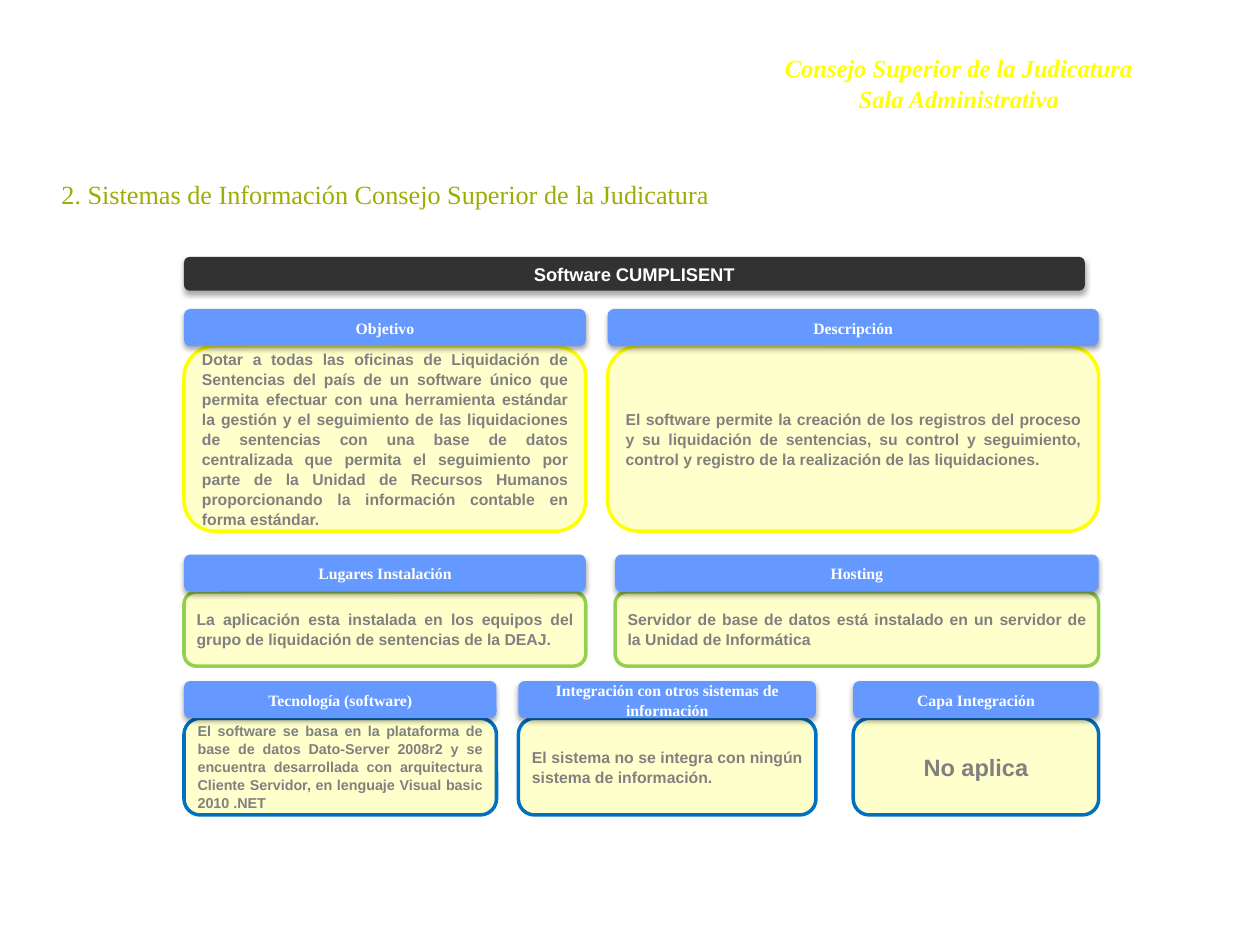
from lxml.etree import SubElement
from pptx import Presentation
from pptx.dml.color import RGBColor
from pptx.enum.shapes import MSO_SHAPE
from pptx.enum.text import MSO_ANCHOR, PP_ALIGN
from pptx.oxml.ns import qn
from pptx.util import Cm, Pt

LEFT = 3.71
HEADER_HEIGHT = 0.75
SERIF = "Times New Roman"
SANS = "Arial"

SECTIONS = [
    (6.23, 3.73, "FFFF00", [
        (LEFT, 8.1, "Objetivo", "Dotar a todas las oficinas de Liquidación de Sentencias del país de un software único que permita efectuar con una herramienta estándar la gestión y el seguimiento de las liquidaciones de sentencias con una base de datos centralizada que permita el seguimiento por parte de la Unidad de Recursos Humanos proporcionando la información contable en forma estándar.", 9),
        (12.25, 9.9, "Descripción", "El software permite la creación de los registros del proceso y su liquidación de sentencias, su control y seguimiento, control y registro de la realización de las liquidaciones.", 9),
    ]),
    (11.18, 1.5, "92D050", [
        (LEFT, 8.1, "Lugares Instalación", "La aplicación esta instalada en los equipos del grupo de liquidación de sentencias de la DEAJ.", 9),
        (12.4, 9.75, "Hosting", "Servidor de base de datos está instalado en un servidor de la Unidad de Informática", 9),
    ]),
    (13.73, 1.95, "0070C0", [
        (LEFT, 6.3, "Tecnología (software)", "El software se basa en la plataforma de base de datos Dato-Server 2008r2 y se encuentra desarrollada con arquitectura Cliente Servidor, en lenguaje Visual basic 2010 .NET", 8.2),
        (10.45, 6, "Integración con otros sistemas de información", "El sistema no se integra con ningún sistema de información.", 9),
        (17.2, 4.95, "Capa Integración", "No aplica", 13.5),
    ]),
]


def color(value):
    return RGBColor.from_string(value)


def format_paragraph(paragraph, font_name, size, font_color, alignment, bold=True, italic=False):
    paragraph.alignment = alignment
    paragraph.line_spacing = 1.05
    font = paragraph.font
    font.name = font_name
    font.size = Pt(size)
    font.bold = bold
    font.italic = italic
    font.color.rgb = color(font_color)


def add_box(slide, left, top, width, height, fill, text, font_name, size, font_color, alignment):
    shape = slide.shapes.add_shape(
        MSO_SHAPE.ROUNDED_RECTANGLE, Cm(left), Cm(top), Cm(width), Cm(height))
    shape.shadow.inherit = False
    shape.fill.solid()
    shape.fill.fore_color.rgb = color(fill)
    shape.line.fill.background()
    frame = shape.text_frame
    frame.word_wrap = True
    frame.vertical_anchor = MSO_ANCHOR.MIDDLE
    frame.margin_left = frame.margin_right = Cm(0.18)
    frame.margin_top = frame.margin_bottom = Cm(0.1)
    frame.text = text
    format_paragraph(frame.paragraphs[0], font_name, size, font_color, alignment)
    return shape


def add_shadow(shape):
    effects = shape.element.spPr.find(qn("a:effectLst"))
    shadow = SubElement(effects, qn("a:outerShdw"), blurRad=str(Pt(3.1)),
                        dist=str(Pt(1.8)), dir="5400000", rotWithShape="0")
    shadow_color = SubElement(shadow, qn("a:srgbClr"), val="000000")
    SubElement(shadow_color, qn("a:alpha"), val="35000")


def add_header(slide, left, top, width, height, fill, text, font_name, size):
    add_shadow(add_box(slide, left, top, width, height, fill, text,
                       font_name, size, "FFFFFF", PP_ALIGN.CENTER))


def add_card(slide, left, top, width, height, outline, text, size):
    alignment = PP_ALIGN.CENTER if size > 9 else PP_ALIGN.JUSTIFY
    card = add_box(slide, left, top, width, height, "FFFFCC", text, SANS, size, "808080", alignment)
    card.line.color.rgb = color(outline)
    card.line.width = Pt(2)


def add_institution(slide):
    box = slide.shapes.add_textbox(Cm(15.57), Cm(0.92), Cm(7.52), Cm(2.03))
    frame = box.text_frame
    frame.word_wrap = True
    frame.text = "Consejo Superior de la Judicatura\nSala Administrativa"
    for paragraph in frame.paragraphs:
        format_paragraph(paragraph, SERIF, 14, "FFFF00", PP_ALIGN.CENTER, italic=True)


def set_title(slide, text):
    title = slide.shapes.title
    title.left, title.top, title.width, title.height = Cm(0), Cm(3.23), Cm(15.54), Cm(1.32)
    frame = title.text_frame
    frame.vertical_anchor = MSO_ANCHOR.MIDDLE
    frame.text = text
    format_paragraph(frame.paragraphs[0], SERIF, 15, "9AAE04", PP_ALIGN.CENTER, bold=False)


def main():
    presentation = Presentation()
    presentation.slide_width, presentation.slide_height = Cm(25.4), Cm(19.05)
    slide = presentation.slides.add_slide(presentation.slide_layouts[5])
    add_institution(slide)
    set_title(slide, "2. Sistemas de Información Consejo Superior de la Judicatura")
    add_header(slide, LEFT, 5.18, 18.16, 0.68, "323232", "Software CUMPLISENT", SANS, 10.5)
    for top, card_height, outline, columns in SECTIONS:
        for left, width, heading, text, size in columns:
            add_card(slide, left, top + HEADER_HEIGHT, width, card_height, outline, text, size)
            add_header(slide, left, top, width, HEADER_HEIGHT, "6699FF", heading, SERIF, 9)
    presentation.save("out.pptx")


if __name__ == "__main__":
    main()
